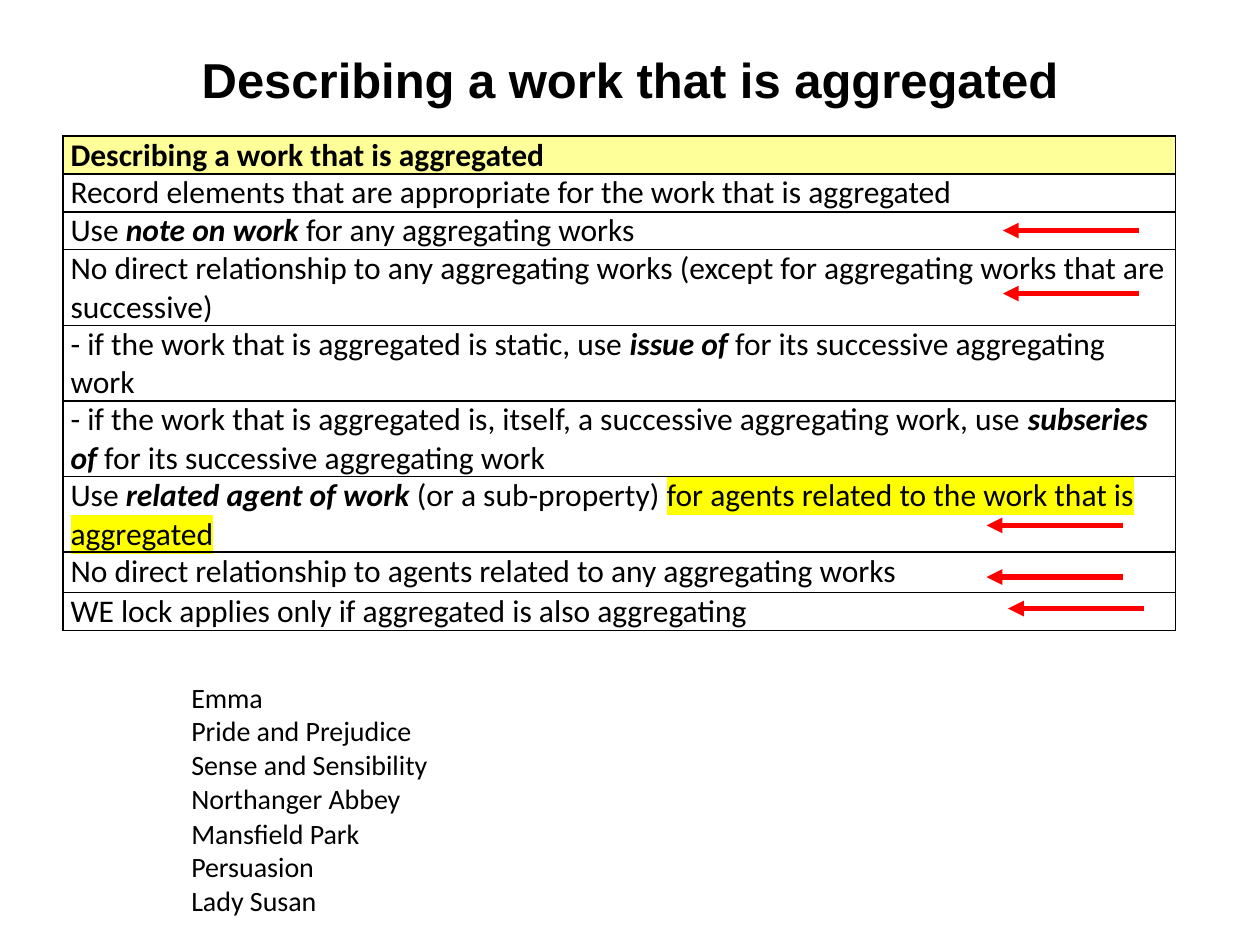
from lxml import etree
from pptx import Presentation
from pptx.dml.color import RGBColor
from pptx.enum import shapes, text
from pptx.oxml import ns
from pptx.util import Inches, Pt

TITLE = "Describing a work that is aggregated"
ROWS = [
    (0.3, [(TITLE, "bold")]),
    (0.3, [("Record elements that are appropriate for the work that is aggregated", "")]),
    (0.3, [("Use ", ""), ("note on work", "term"), (" for any aggregating works", "")]),
    (0.6, [("No direct relationship to any aggregating works (except for aggregating works that are successive)", "")]),
    (0.6, [("- if the work that is aggregated is static, use ", ""), ("issue of", "term"),
           (" for its successive aggregating work", "")]),
    (0.6, [("- if the work that is aggregated is, itself, a successive aggregating work, use ", ""),
           ("subseries of", "term"), (" for its successive aggregating work", "")]),
    (0.6, [("Use ", ""), ("related agent of work", "term"), (" (or a sub-property) ", ""),
           ("for agents related to the work that is aggregated", "marked")]),
    (0.32, [("No direct relationship to agents related to any aggregating works", "")]),
    (0.3, [("WE lock applies only if aggregated is also aggregating", "")]),
]
NOVELS = [
    (5.35, 2.15, 1.18, ["Emma", "Pride and Prejudice", "Sense and Sensibility", "Northanger Abbey"]),
    (6.43, 1.94, 0.91, ["Mansfield Park", "Persuasion", "Lady Susan"]),
]
ARROWS = [(7.96, 1.83), (7.96, 2.33), (7.83, 4.17), (7.83, 4.58), (8, 4.83)]
ARROW_LENGTH = 1.08


def color(value):
    return RGBColor.from_string(value)


def sub(parent, tag, **attrs):
    return etree.SubElement(parent, ns.qn(tag), attrs)


def style(r, size, font="Calibri", bold=False, italic=False):
    r.font.size = Pt(size)
    r.font.name = font
    r.font.bold = bold
    r.font.italic = italic
    r.font.color.rgb = color("000000")


def highlight(r, value):
    mark = etree.Element(ns.qn("a:highlight"))
    sub(mark, "a:srgbClr", val=value)
    r.font._element.find(ns.qn("a:solidFill")).addnext(mark)


def add_text(s, box, lines, size, **look):
    sp = s.shapes.add_textbox(*map(Inches, box))
    tf = sp.text_frame
    tf.word_wrap = True
    tf.text = "\n".join(lines)
    for p in tf.paragraphs:
        for r in p.runs:
            style(r, size, **look)
    return tf


def add_borders(cell):
    props = cell._tc.get_or_add_tcPr()
    for side in ("L", "R", "T", "B"):
        line = sub(props, "a:ln" + side, w=str(Pt(1)))
        sub(sub(line, "a:solidFill"), "a:srgbClr", val="000000")


def add_rules(s):
    height = sum(h for h, _ in ROWS)
    frame = s.shapes.add_table(len(ROWS), 1, Inches(0.5), Inches(1.08), Inches(8.83), Inches(height))
    table = frame.table
    for i, (h, runs) in enumerate(ROWS):
        table.rows[i].height = Inches(h)
        cell = table.cell(i, 0)
        cell.margin_left = cell.margin_right = Inches(0.06)
        cell.margin_top = cell.margin_bottom = 0
        add_borders(cell)
        if i == 0:
            cell.fill.solid()
            cell.fill.fore_color.rgb = color("FFFF99")
        else:
            cell.fill.background()
        for words, kind in runs:
            r = cell.text_frame.paragraphs[0].add_run()
            r.text = words
            style(r, 18, bold=kind in ("bold", "term"), italic=kind == "term")
            if kind == "marked":
                highlight(r, "FFFF00")


def add_arrow(s, x, y):
    sp = s.shapes.add_connector(shapes.MSO_CONNECTOR.STRAIGHT, Inches(x), Inches(y),
                                Inches(x + ARROW_LENGTH), Inches(y))
    sp.line.color.rgb = color("FF0000")
    sp.line.width = Pt(3)
    sub(sp.line._get_or_add_ln(), "a:headEnd", type="triangle")
    sub(sp._element.spPr, "a:effectLst")


def main():
    prs = Presentation()
    prs.slide_width, prs.slide_height = Inches(10), Inches(7.5)
    s = prs.slides.add_slide(prs.slide_layouts[6])
    tf = add_text(s, (0, 0, 10, 1.25), [TITLE], 28, font="Arial", bold=True)
    tf.vertical_anchor = text.MSO_ANCHOR.MIDDLE
    tf.paragraphs[0].alignment = text.PP_ALIGN.CENTER
    for top, width, height, names in NOVELS:
        add_text(s, (1.42, top, width, height), names, 16)
    add_rules(s)
    for x, y in ARROWS:
        add_arrow(s, x, y)
    prs.save("out.pptx")


if __name__ == "__main__":
    main()
